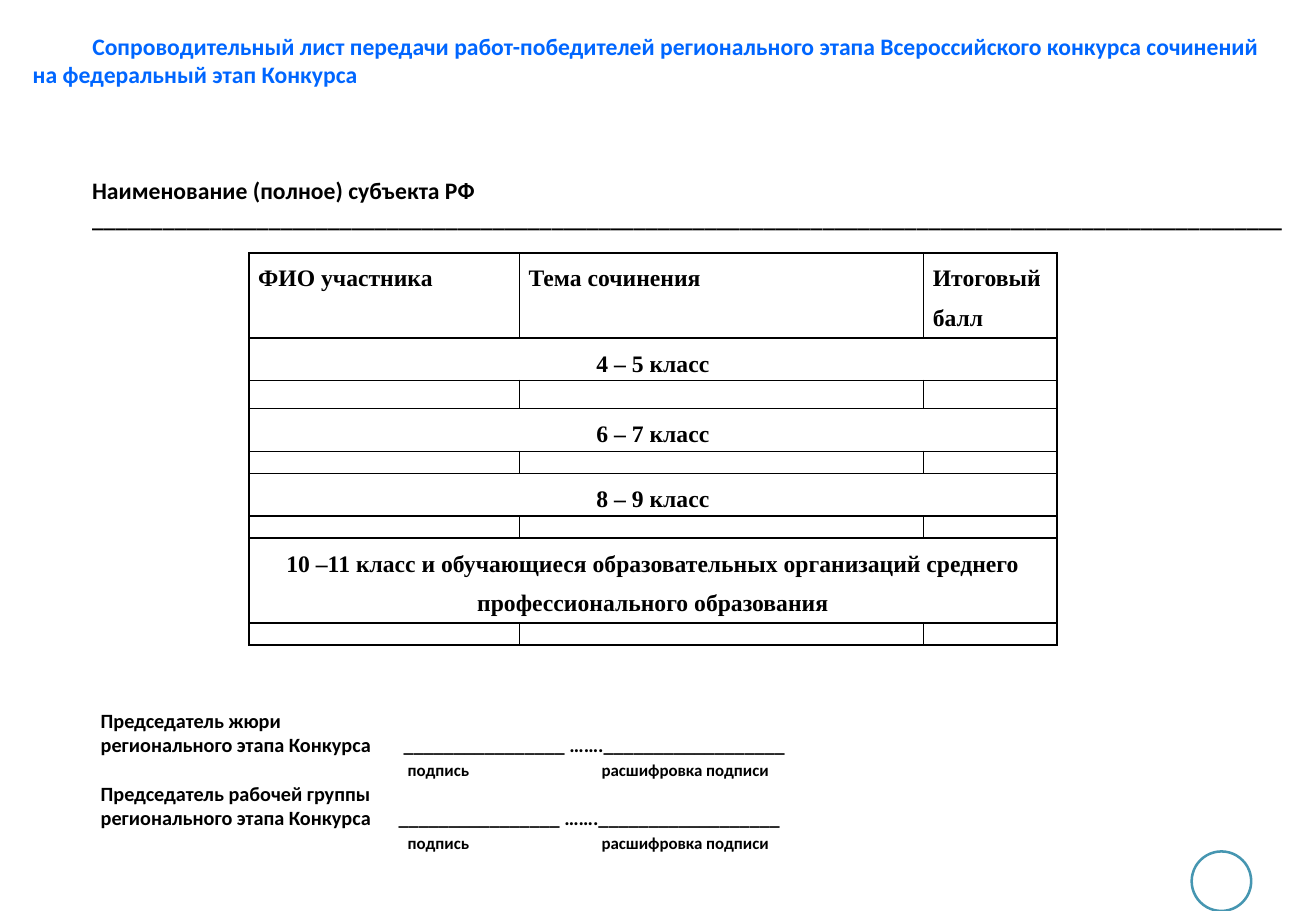
"""Builds the cover sheet for contest works sent to the federal stage."""
from pptx import Presentation
from pptx.dml.color import RGBColor
from pptx.enum.shapes import MSO_SHAPE
from pptx.enum.text import MSO_ANCHOR, MSO_AUTO_SIZE, PP_ALIGN
from pptx.oxml.ns import qn
from pptx.util import Pt
from lxml.etree import SubElement


def color(code):
    return RGBColor.from_string(code)


def write(para, text, size, face="Calibri", code="000000"):
    run = para.add_run()
    run.text = text
    for key, val in {"size": Pt(size), "name": face, "bold": True}.items():
        setattr(run.font, key, val)
    run.font.color.rgb = color(code)


deck = Presentation()
deck.slide_width, deck.slide_height = Pt(780), Pt(540)
slide = deck.slides.add_slide(deck.slide_layouts[5])
shapes = slide.shapes
frame = {"word_wrap": True, "auto_size": MSO_AUTO_SIZE.NONE,
         "vertical_anchor": MSO_ANCHOR.TOP}

ring = shapes.add_shape(MSO_SHAPE.OVAL, Pt(706.3), Pt(504.7), Pt(35.3), Pt(35.3))
ring.shadow.inherit = False
ring.fill.solid()
ring.fill.fore_color.rgb = color("FFFFFF")
ring.line.color.rgb = color("4696B1")
ring.line.width = Pt(1.5)

title = shapes.title
place = {"left": 12.2, "top": 15.1, "width": 757.4, "height": 41.4}
for key, val in place.items():
    setattr(title, key, Pt(val))
region = shapes.add_textbox(Pt(47.5), Pt(100.6), Pt(722.1), Pt(41.4))
signs = shapes.add_textbox(Pt(52.6), Pt(416.2), Pt(541), Pt(95))
for box in (title, region, signs):
    for key, val in frame.items():
        setattr(box.text_frame, key, val)

head = title.text_frame.paragraphs[0]
head.alignment = PP_ALIGN.LEFT
head._p.get_or_add_pPr().set("indent", str(Pt(35.3)))
write(head, "Сопроводительный лист передачи работ-победителей регионального этапа "
      "Всероссийского конкурса сочинений на федеральный этап Конкурса", 14, code="0066FF")

body = region.text_frame
write(body.paragraphs[0], "Наименование (полное) субъекта РФ", 14)
write(body.add_paragraph(), "_" * 101, 14)

rule = "_" * 16 + " ……." + "_" * 18
body = signs.text_frame
para = body.paragraphs[0]
for role, stop in (("Председатель жюри", 179.6), ("Председатель рабочей группы", 176.6)):
    if para is None:
        para = body.add_paragraph()
    write(para, role, 12)
    line, note = body.add_paragraph(), body.add_paragraph()
    for item, stops in ((line, [stop]), (note, [181.9, 296.9])):
        tabs = SubElement(item._p.get_or_add_pPr(), qn("a:tabLst"))
        for pos in stops:
            SubElement(tabs, qn("a:tab"), pos=str(Pt(pos)), algn="l")
    write(line, "регионального этапа Конкурса\t" + rule, 12)
    write(note, "\t", 12)
    write(note, "подпись\tрасшифровка подписи", 10)
    para = None

rows = [
    (50.4, ["ФИО участника", "Тема сочинения", "Итоговый балл"]),
    (25.2, ["4 – 5 класс"]), (16.8, []),
    (25.2, ["6 – 7 класс"]), (13.1, []),
    (25.2, ["8 – 9 класс"]), (13.1, []),
    (50.4, ["10 –11 класс и обучающиеся образовательных организаций "
            "среднего профессионального образования"]), (13.1, []),
]
grid = shapes.add_table(len(rows), 3, Pt(147.6), Pt(149.9), Pt(478.8), Pt(232.5)).table
grid.first_row = grid.horz_banding = False
for col, width in zip(grid.columns, (160.3, 239.6, 78.9)):
    col.width = Pt(width)
pads = {"margin_left": 5.4, "margin_right": 5.4, "margin_top": 0, "margin_bottom": 0}
for r, (height, texts) in enumerate(rows):
    grid.rows[r].height = Pt(height)
    if len(texts) == 1:
        grid.cell(r, 0).merge(grid.cell(r, 2))
    for c in range(3):
        cell = grid.cell(r, c)
        for key, val in pads.items():
            setattr(cell, key, Pt(val))
        props = cell._tc.get_or_add_tcPr()
        for side in ("a:lnL", "a:lnR", "a:lnT", "a:lnB"):
            edge = SubElement(props, qn(side), w=str(Pt(1)))
            fill = SubElement(edge, qn("a:solidFill"))
            SubElement(fill, qn("a:srgbClr"), val="000000")
        cell.fill.solid()
        cell.fill.fore_color.rgb = color("FFFFFF")
        para = cell.text_frame.paragraphs[0]
        if c < len(texts):
            para.alignment = PP_ALIGN.CENTER if len(texts) == 1 else PP_ALIGN.JUSTIFY
            para.line_spacing = 1.5
            write(para, texts[c], 14, "Times New Roman")
        else:
            SubElement(para._p, qn("a:endParaRPr"), sz="1000")

deck.save("out.pptx")
